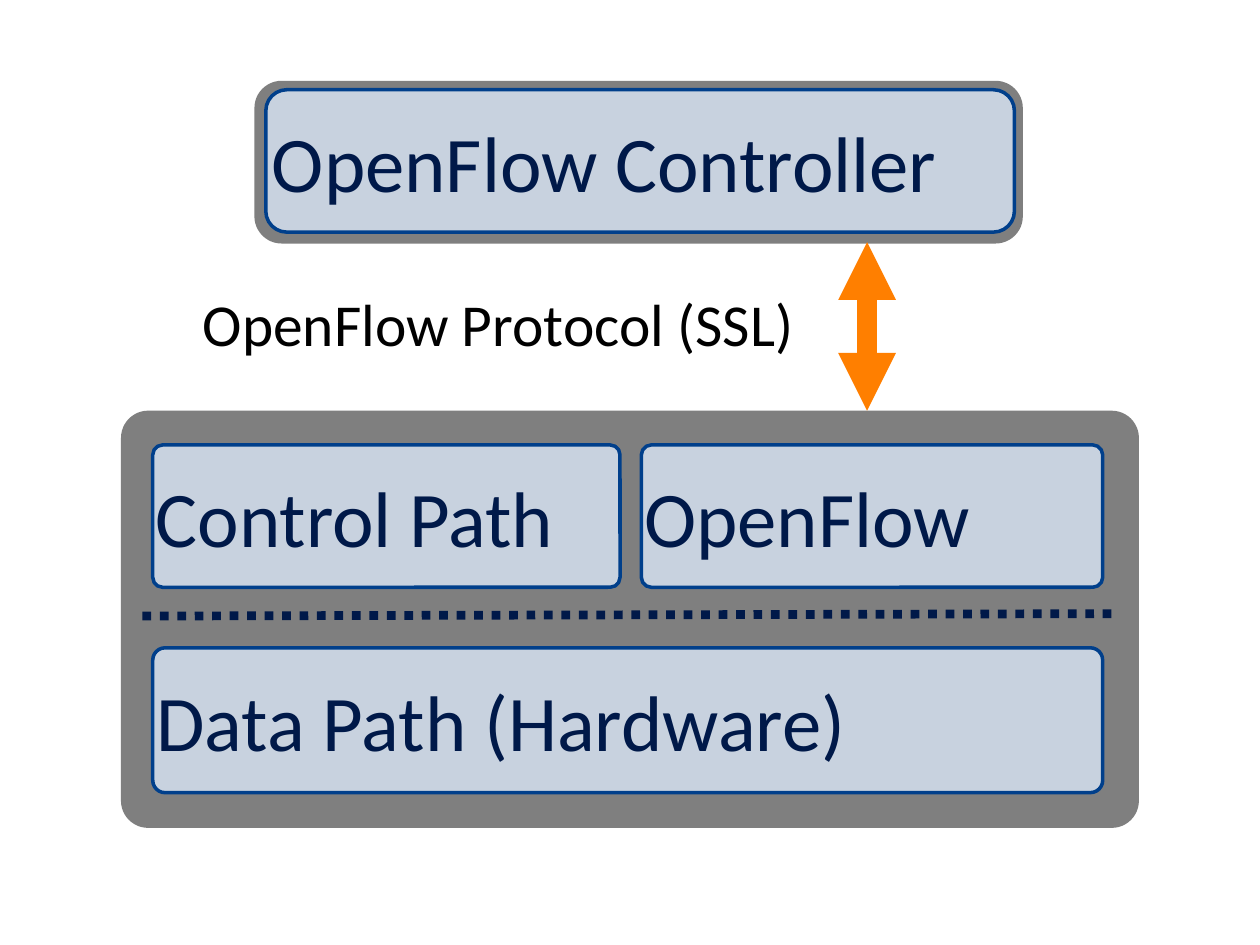
from pptx import Presentation
from pptx.dml.color import RGBColor
from pptx.enum.dml import MSO_LINE
from pptx.enum.shapes import MSO_CONNECTOR, MSO_SHAPE
from pptx.enum.text import MSO_ANCHOR, MSO_AUTO_SIZE, PP_ALIGN
from pptx.oxml.ns import qn
from pptx.util import Cm, Pt
from lxml.etree import SubElement

GREY, PALE, BLUE, NAVY = "7F7F7F", "C8D2DF", "003F8B", "001949"
ORANGE, BLACK = "FF7F00", "000000"


def paint(color_format, color):
    """Set a fill's or font's colour from a hex string."""
    color_format.rgb = RGBColor.from_string(color)


def write(shape, text, size, color):
    """Write one left-aligned line, vertically centred without insets."""
    frame = shape.text_frame
    frame.text = text
    frame.vertical_anchor = MSO_ANCHOR.MIDDLE
    frame.margin_left = frame.margin_right = frame.margin_top = frame.margin_bottom = 0
    paragraph = frame.paragraphs[0]
    paragraph.alignment = PP_ALIGN.LEFT
    span = paragraph.runs[0]
    span.font.name = "Calibri"
    span.font.size = Pt(size)
    paint(span.font.color, color)


def add_panel(page, left, top, width, height, rounding, fill=GREY):
    """Add a borderless rounded rectangle."""
    panel = page.shapes.add_shape(
        MSO_SHAPE.ROUNDED_RECTANGLE, Cm(left), Cm(top), Cm(width), Cm(height))
    panel.adjustments[0] = rounding
    panel.shadow.inherit = False
    panel.fill.solid()
    paint(panel.fill.fore_color, fill)
    panel.line.fill.background()
    return panel


def add_block(page, text, left, top, width, height, rounding):
    """Add a pale outlined block with a large label."""
    block = add_panel(page, left, top, width, height, rounding, PALE)
    block.line.fill.solid()
    paint(block.line.color, BLUE)
    block.line.width = Pt(2)
    write(block, text, 45, NAVY)


def add_line(page, start_x, start_y, end_x, end_y, color, width):
    """Add a straight line without a shadow."""
    line = page.shapes.add_connector(
        MSO_CONNECTOR.STRAIGHT, Cm(start_x), Cm(start_y), Cm(end_x), Cm(end_y))
    paint(line.line.color, color)
    line.line.width = Pt(width)
    SubElement(line._element.spPr, qn("a:effectLst"))
    return line


def add_switch(page, left, top, width, height):
    """Add the switch with its two upper blocks, divider and data path."""
    add_panel(page, left, top, width, height, 0.065)
    blocks = (
        ("Data Path (Hardware)", 0.64, 4.78, 19.15, 2.92, 0.085),
        ("Control Path", 0.64, 0.69, 9.42, 2.87, 0.069),
        ("OpenFlow", 10.49, 0.69, 9.3, 2.87, 0.069),
    )
    for text, across, down, block_width, block_height, rounding in blocks:
        add_block(page, text, left + across, top + down,
                  block_width, block_height, rounding)
    divider = add_line(page, left + 0.43, top + 4.14,
                       left + width - 0.43, top + 4.09, NAVY, 5)
    divider.line.dash_style = MSO_LINE.ROUND_DOT


def add_controller(page, left, top, width, height):
    """Add the controller block on its grey panel."""
    add_panel(page, left, top, width, height, 0.167)
    add_block(page, "OpenFlow Controller", left + 0.23, top + 0.18,
              width - 0.4, height - 0.41, 0.147)


def add_protocol(page, left, top, width, height):
    """Add the two-way arrow at the right edge and the label beside it."""
    arrow = add_line(page, left + width, top, left + width, top + height, ORANGE, 11)
    outline = arrow.line._get_or_add_ln()
    for end in ("a:headEnd", "a:tailEnd"):
        SubElement(outline, qn(end), type="triangle")
    label = page.shapes.add_textbox(Cm(left), Cm(top + 0.91), Cm(13.74), Cm(1.45))
    write(label, "OpenFlow Protocol (SSL)", 34, BLACK)
    label.text_frame.word_wrap = False
    label.text_frame.auto_size = MSO_AUTO_SIZE.SHAPE_TO_FIT_TEXT


def main():
    """Build and save the deck."""
    deck = Presentation()
    deck.slide_width, deck.slide_height = Cm(25.4), Cm(19.05)
    page = deck.slides.add_slide(deck.slide_layouts[6])
    add_switch(page, 2.44, 8.28, 20.52, 8.41)
    add_controller(page, 5.13, 1.63, 15.49, 3.28)
    add_protocol(page, 4.09, 4.88, 13.39, 3.4)
    deck.save("out.pptx")


if __name__ == "__main__":
    main()
